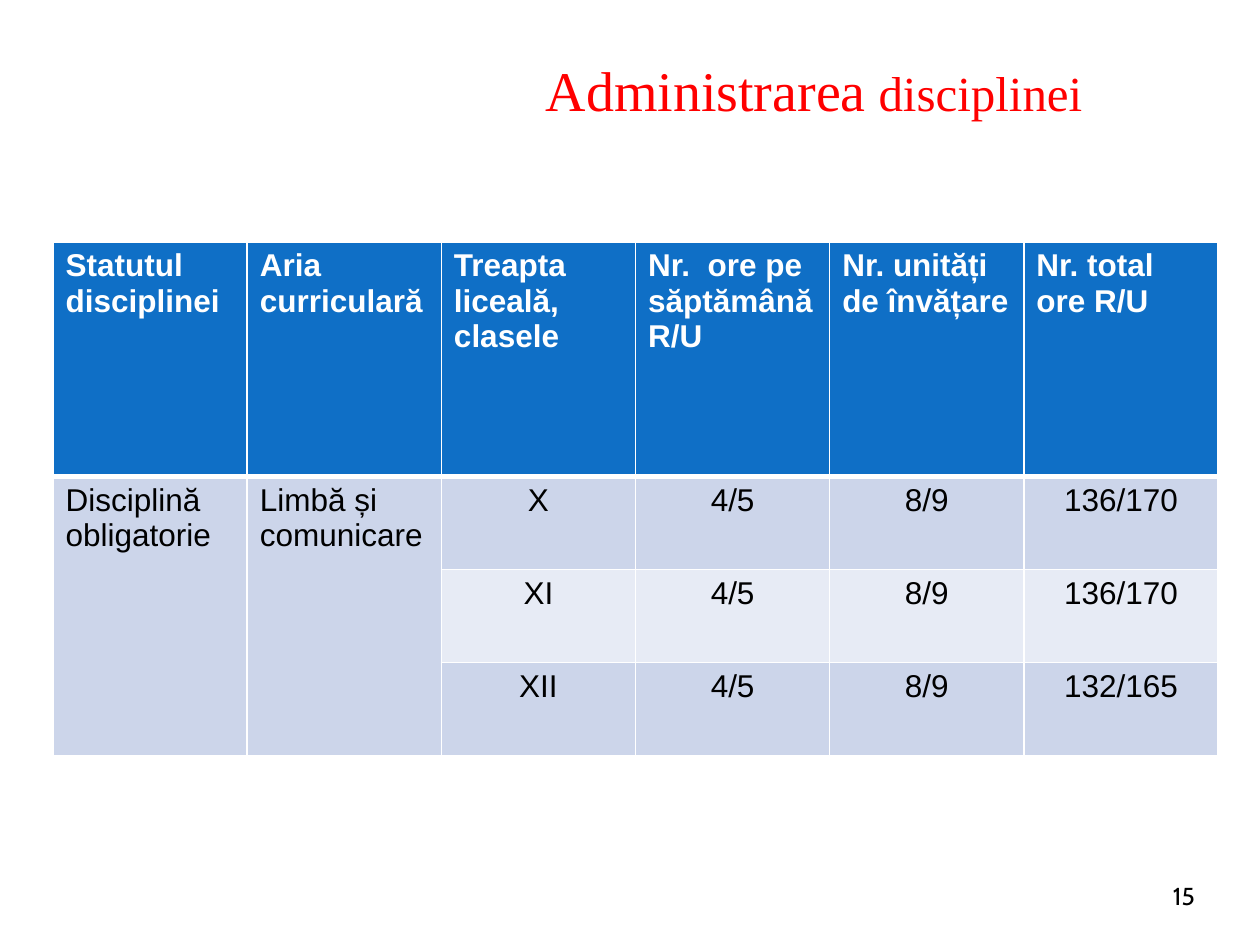
from lxml.etree import SubElement
from pptx import Presentation
from pptx.dml.color import RGBColor
from pptx.enum.text import MSO_ANCHOR as Anchor, PP_ALIGN as Align
from pptx.oxml.ns import qn
from pptx.util import Cm, Pt


def add_run(paragraph, text, size, font, color, bold=False):
    run = paragraph.add_run()
    run.text = text
    run.font.size = Pt(size)
    run.font.name = font
    run.font.bold = bold
    run.font.color.rgb = RGBColor.from_string(color)


def add_border(cell, side, points, color):
    line = SubElement(cell._tc.get_or_add_tcPr(), qn(f"a:{side}"), w=str(Pt(points)))
    fill = SubElement(line, qn("a:solidFill"))
    SubElement(fill, qn("a:srgbClr"), val=color)


prs = Presentation()
prs.slide_width, prs.slide_height = Cm(25.4), Cm(19.05)
slide = prs.slides.add_slide(prs.slide_layouts[6])

# Title
title = slide.shapes.add_textbox(Cm(8.69), Cm(0.84), Cm(15.44), Cm(1.9)).text_frame
title.word_wrap = True
title.vertical_anchor = Anchor.MIDDLE
heading = title.paragraphs[0]
heading.alignment = Align.CENTER
add_run(heading, "Administrarea", 32, "Times New Roman", "FF0000")
add_run(heading, " disciplinei", 28, "Times New Roman", "FF0000")

# Table of hours; the first two columns span all classes
rows = [
    ["Statutul disciplinei", "Aria curriculară", "Treapta liceală, clasele",
     "Nr.  ore pe săptămână R/U", "Nr. unități de învățare", "Nr. total ore R/U"],
    ["Disciplină obligatorie", "Limbă și comunicare", "X", "4/5", "8/9", "136/170"],
    ["", "", "XI", "4/5", "8/9", "136/170"],
    ["", "", "XII", "4/5", "8/9", "132/165"],
]
row_heights = [4.72, 1.88, 1.88, 1.88]
row_fills = ["0F6FC6", "CCD5EA", "E7EBF5", "CCD5EA"]

hours = slide.shapes.add_table(len(rows), len(rows[0]), Cm(1.07), Cm(4.88),
                               Cm(23.49), Cm(sum(row_heights))).table
for column in hours.columns:
    column.width = Cm(23.49 / len(rows[0]))

for r, texts in enumerate(rows):
    hours.rows[r].height = Cm(row_heights[r])
    for c, text in enumerate(texts):
        cell = hours.cell(r, c)
        add_border(cell, "lnL", 1, "FFFFFF")
        add_border(cell, "lnR", 1, "FFFFFF")
        add_border(cell, "lnT", 3 if r == 1 else 1, "FFFFFF")
        add_border(cell, "lnB", 3 if r == 0 else 1, "FFFFFF")
        cell.fill.solid()
        cell.fill.fore_color.rgb = RGBColor.from_string(row_fills[r])
        if text:
            entry = cell.text_frame.paragraphs[0]
            entry.alignment = Align.CENTER if r > 0 and c > 1 else Align.LEFT
            add_run(entry, text, 18, "Arial", "000000" if r else "FFFFFF", bold=r == 0)

for c in range(2):
    hours.cell(1, c).merge(hours.cell(3, c))

# Page number
footer = slide.shapes.add_textbox(Cm(18.42), Cm(17.15), Cm(5.92), Cm(1.32)).text_frame
footer.word_wrap = True
footer.vertical_anchor = Anchor.BOTTOM
page_number = footer.paragraphs[0]
page_number.alignment = Align.RIGHT
add_run(page_number, "15", 14, "Cabin", "000000")

prs.save("out.pptx")
